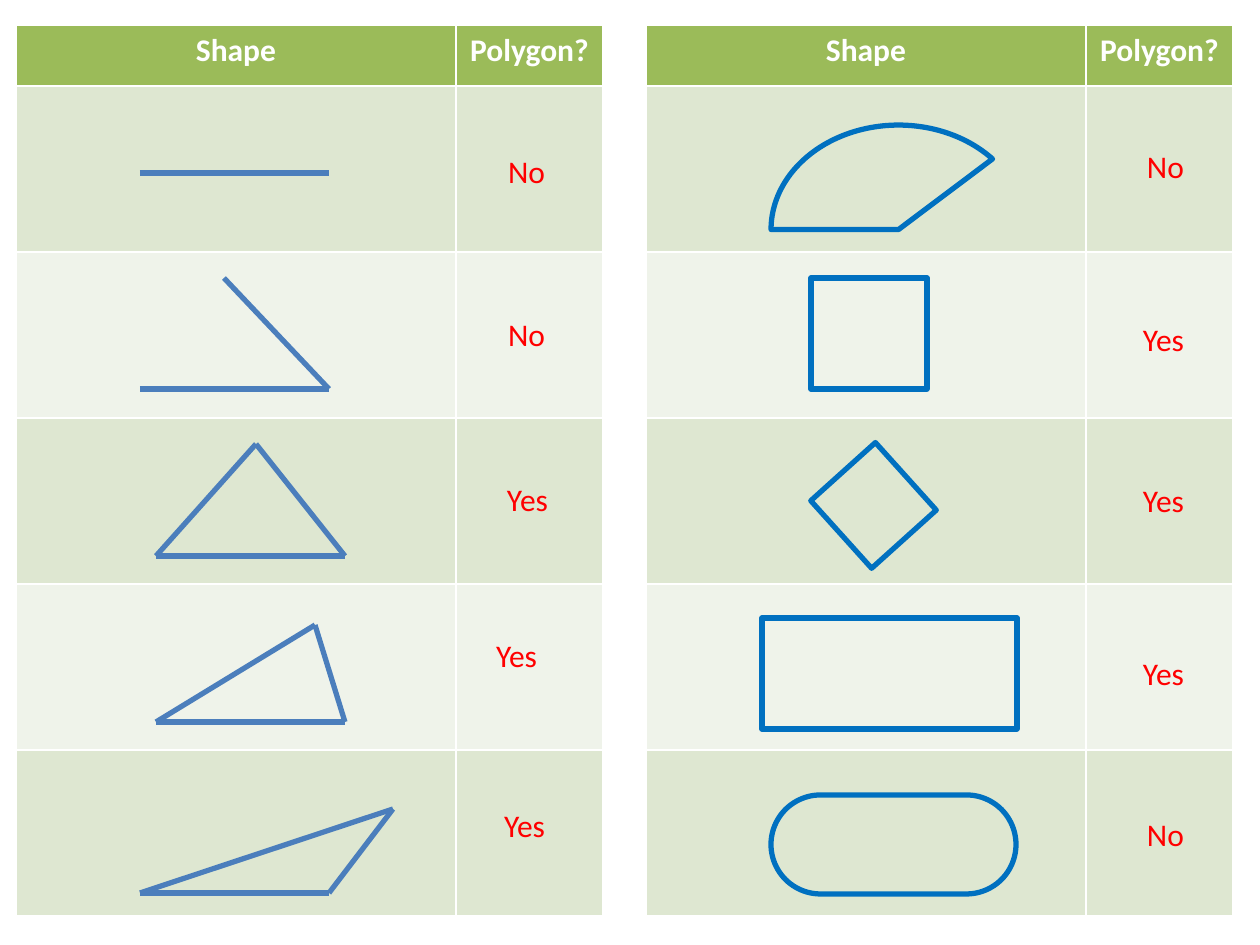
"""Build a slide that asks which drawn shapes are polygons."""
from itertools import pairwise

from lxml.etree import SubElement
from pptx import Presentation
from pptx.dml.color import RGBColor
from pptx.enum.shapes import MSO_CONNECTOR as Connector, MSO_SHAPE as Preset
from pptx.enum.text import MSO_AUTO_SIZE as AutoSize, PP_ALIGN as Align
from pptx.oxml.ns import qn
from pptx.util import Pt

PX = 914400 / 126
HEADER_HEIGHT, ROW_HEIGHT = 61, 166
HEADER_FILL, BAND_FILLS = "9BBB59", ("EFF3EA", "DEE7D1")
HEADER_FONT = {"name": "Calibri", "size": Pt(18), "bold": True}
ANSWER_FONT = {"name": "Calibri", "size": Pt(18)}


def px(*lengths):
    return [round(length * PX) for length in lengths]


def write(text_frame, text, font_format, color):
    paragraph = text_frame.paragraphs[0]
    paragraph.alignment = Align.CENTER
    run = paragraph.add_run()
    run.text = text
    for name, value in font_format.items():
        setattr(run.font, name, value)
    run.font.color.rgb = RGBColor.from_string(color)


presentation = Presentation()
presentation.slide_width, presentation.slide_height = px(1260, 945)
slide = presentation.slides.add_slide(presentation.slide_layouts[6])
shapes = slide.shapes

for left in (16, 646):
    height = HEADER_HEIGHT + 5 * ROW_HEIGHT
    table = shapes.add_table(6, 2, *px(left, 25, 587, height)).table
    for column, width in zip(table.columns, px(440, 147)):
        column.width = width
    for index, row in enumerate(table.rows):
        row.height = px(ROW_HEIGHT if index else HEADER_HEIGHT)[0]
        for cell in row.cells:
            cell.fill.solid()
            fill = BAND_FILLS[index % 2] if index else HEADER_FILL
            cell.fill.fore_color.rgb = RGBColor.from_string(fill)
    for cell, heading in zip(table.rows[0].cells, ("Shape", "Polygon?")):
        write(cell.text_frame, heading, HEADER_FONT, "FFFFFF")

line_figures = [
    [(140, 173), (329, 173)],
    [(140, 389), (329, 389), (224, 278)],
    [(156, 556), (345, 556), (256, 444), (156, 556)],
    [(156, 722), (345, 722), (315, 625), (156, 722)],
    [(140, 893), (329, 893), (393, 809), (140, 893)],
]
for points in line_figures:
    for start, end in pairwise(points):
        line = shapes.add_connector(Connector.STRAIGHT, *px(*start, *end))
        line.line.color.rgb = RGBColor.from_string("4B7EBC")
        line.line.width = Pt(3)
        SubElement(line._element.spPr, qn("a:effectLst"))

preset_figures = [
    (Preset.PIE, (771, 125, 255, 209), 180, (0, 85.86)),
    (Preset.RECTANGLE, (811, 278, 116, 111), 0, ()),
    (Preset.RECTANGLE, (828, 462, 91, 87), 48, ()),
    (Preset.RECTANGLE, (762, 618, 255, 111), 0, ()),
    (Preset.ROUNDED_RECTANGLE, (771, 795, 245, 99), 0, (0.5,)),
]
for preset, box, rotation, adjustments in preset_figures:
    shape = shapes.add_shape(preset, *px(*box))
    shape.rotation = rotation
    for index, value in enumerate(adjustments):
        shape.adjustments[index] = value
    shape.shadow.inherit = False
    shape.fill.background()
    shape.line.color.rgb = RGBColor.from_string("0070C0")
    shape.line.width = Pt(3)

answers = [
    ("No", 495, 146), ("No", 495, 309), ("Yes", 494, 474),
    ("Yes", 483, 630), ("Yes", 491, 800),
    ("No", 1134, 141), ("Yes", 1130, 314), ("Yes", 1130, 475),
    ("Yes", 1130, 648), ("No", 1134, 809),
]
for answer, left, top in answers:
    width = 63 if answer == "No" else 67
    text_frame = shapes.add_textbox(*px(left, top, width, 50)).text_frame
    text_frame.word_wrap = False
    text_frame.auto_size = AutoSize.SHAPE_TO_FIT_TEXT
    write(text_frame, answer, ANSWER_FONT, "FF0000")

presentation.save("out.pptx")
